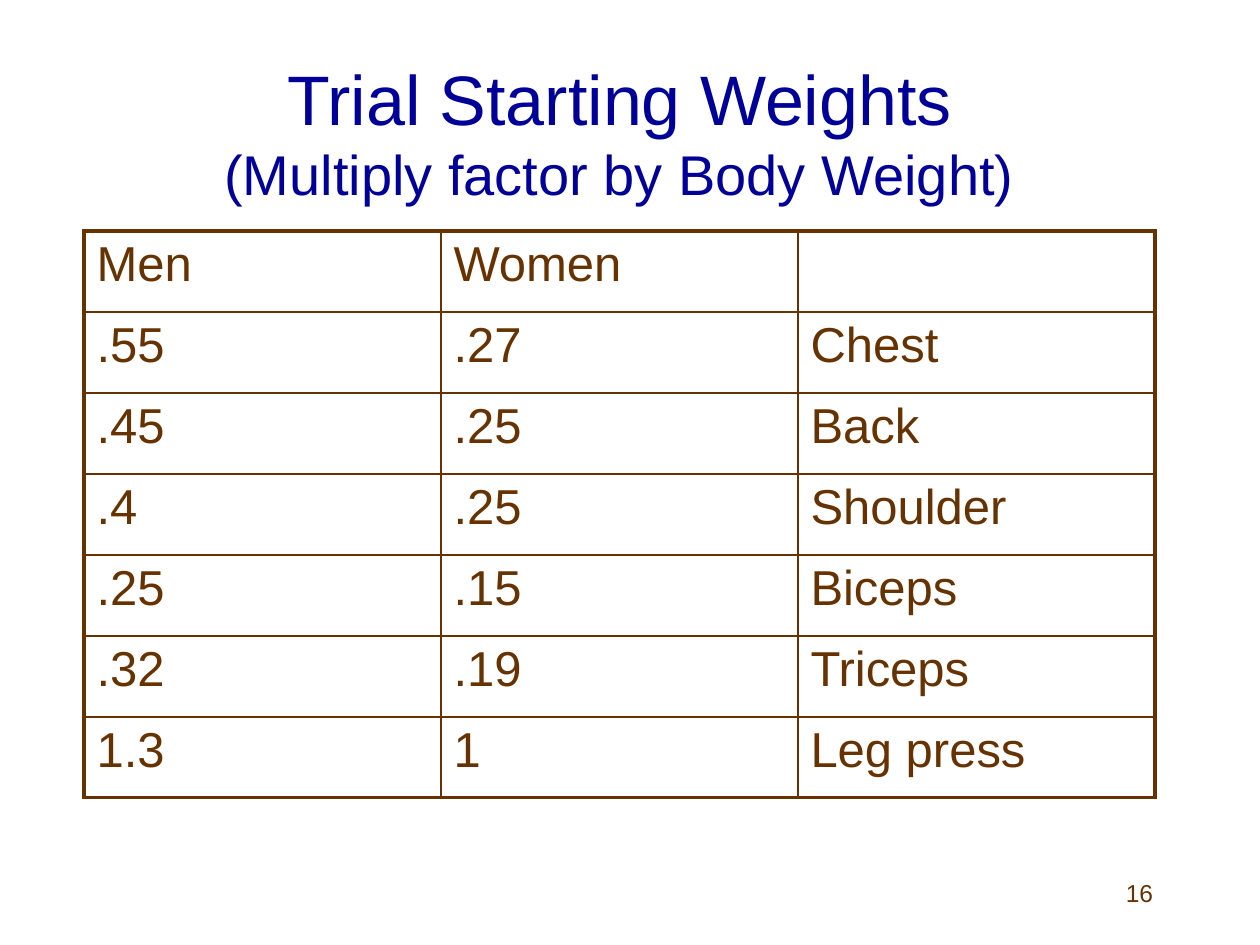
from dataclasses import dataclass

from lxml.etree import SubElement
from pptx import Presentation
from pptx.dml.color import RGBColor
from pptx.enum.text import MSO_ANCHOR, PP_ALIGN
from pptx.oxml.ns import qn
from pptx.util import Inches, Pt


@dataclass(frozen=True)
class Theme:
    """Colours, type sizes and line widths of the slide."""
    font: str = "Arial"
    title: str = "000099"
    body: str = "663300"
    title_size: int = 40
    subtitle_size: int = 32
    cell_size: int = 28
    number_size: int = 14
    frame: float = 2.25
    rule: float = 1


THEME = Theme()
WIDTH, HEIGHT = Inches(10), Inches(7.5)
ROWS = [
    ("Men", "Women", ""),
    (".55", ".27", "Chest"),
    (".45", ".25", "Back"),
    (".4", ".25", "Shoulder"),
    (".25", ".15", "Biceps"),
    (".32", ".19", "Triceps"),
    ("1.3", "1", "Leg press"),
]


def share(x, y, w, h):
    """Turn shares of the slide's size into lengths."""
    return [int(v * side) for v, side in zip((x, y, w, h), (WIDTH, HEIGHT) * 2)]


def style_font(font, size, color):
    """Apply the theme's font with a size and a colour."""
    for name, value in {"name": THEME.font, "size": Pt(size)}.items():
        setattr(font, name, value)
    font.color.rgb = RGBColor.from_string(color)


def add_text(s, box, lines, color, align):
    """Add a text box whose lines are (text, size) pairs."""
    tf = s.shapes.add_textbox(*share(*box)).text_frame
    for name, value in {"word_wrap": True, "vertical_anchor": MSO_ANCHOR.MIDDLE}.items():
        setattr(tf, name, value)
    p = tf.paragraphs[0]
    p.alignment = align
    for i, (text, size) in enumerate(lines):
        if i:
            p.add_line_break()
        r = p.add_run()
        r.text = text
        style_font(r.font, size, color)


def set_borders(cell, widths):
    """Draw the cell's borders from a dict of side and width."""
    tcPr = cell._tc.get_or_add_tcPr()
    for side, width in widths.items():
        ln = SubElement(tcPr, qn(f"a:ln{side}"), w=str(Pt(width)))
        fill = SubElement(ln, qn("a:solidFill"))
        SubElement(fill, qn("a:srgbClr"), val=THEME.body)


def add_grid(s, box, rows):
    """Add a table with thin rules and a thick outer frame."""
    n, m = len(rows), len(rows[0])
    x, y, w, h = share(*box)
    table = s.shapes.add_table(n, m, x, y, w, h).table
    for name in ("first_row", "horz_banding"):
        setattr(table, name, False)
    for i, row in enumerate(rows):
        for j, text in enumerate(row):
            cell = table.cell(i, j)
            outer = {"L": j == 0, "R": j == m - 1, "T": i == 0, "B": i == n - 1}
            set_borders(cell, {k: THEME.frame if v else THEME.rule for k, v in outer.items()})
            cell.fill.background()
            p = cell.text_frame.paragraphs[0]
            p.text = text
            style_font(p.font, THEME.cell_size, THEME.body)


def main():
    """Build the slide and save it."""
    prs = Presentation()
    for name, value in {"slide_width": WIDTH, "slide_height": HEIGHT}.items():
        setattr(prs, name, value)
    s = prs.slides.add_slide(prs.slide_layouts[6])
    title = [("Trial Starting Weights", THEME.title_size),
             ("(Multiply factor by Body Weight)", THEME.subtitle_size)]
    add_text(s, (1 / 15, 1 / 18, 0.85, 1 / 6), title, THEME.title, PP_ALIGN.CENTER)
    add_grid(s, (1 / 15, 11 / 45, 0.85, 0.6), ROWS)
    add_text(s, (43 / 60, 41 / 45, 5 / 24, 1 / 15), [("16", THEME.number_size)],
             THEME.body, PP_ALIGN.RIGHT)
    prs.save("out.pptx")


if __name__ == "__main__":
    main()
